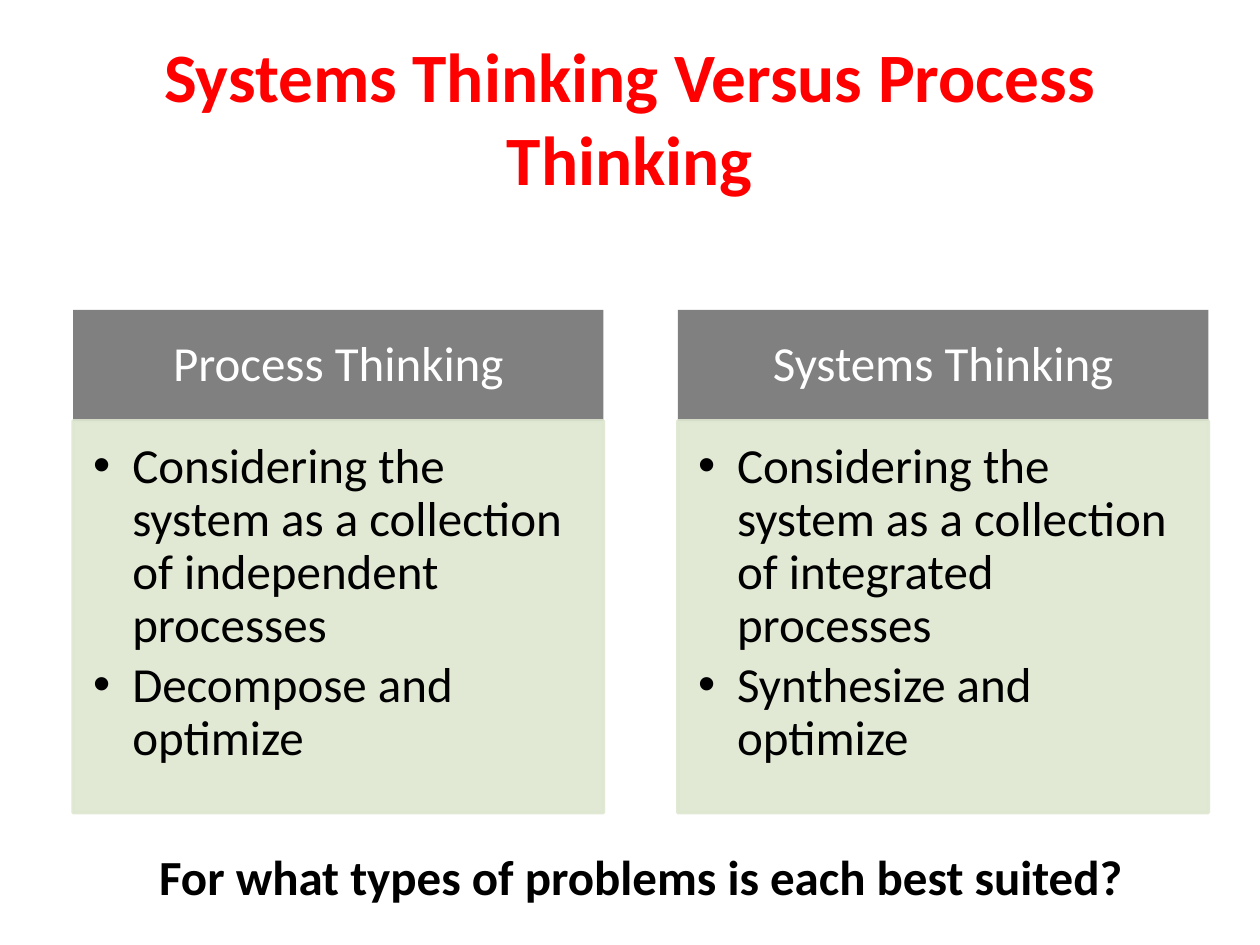
from lxml.etree import SubElement
from pptx import Presentation
from pptx.dml.color import RGBColor
from pptx.enum.shapes import MSO_SHAPE as Shape
from pptx.enum.text import MSO_ANCHOR as Anchor, PP_ALIGN as Align
from pptx.oxml.ns import qn
from pptx.util import Inches, Pt

COLUMN_LEFT, COLUMN_STEP, COLUMN_WIDTH = 0.58, 4.8, 4.21
HEADER_TOP, HEADER_HEIGHT, BODY_HEIGHT = 2.46, 0.88, 3.11
COLUMNS = [
    ("Process Thinking",
     ["Considering the system as a collection of independent processes",
      "Decompose and optimize"]),
    ("Systems Thinking",
     ["Considering the system as a collection of integrated processes",
      "Synthesize and optimize"]),
]


def color(value):
    return RGBColor.from_string(value)


def place(box, left, top, width, height):
    box.left, box.top = Inches(left), Inches(top)
    box.width, box.height = Inches(width), Inches(height)


def add_bullet(para, indent):
    properties = para._p.get_or_add_pPr()
    properties.set("marL", str(Inches(indent)))
    properties.set("indent", str(-Inches(indent)))
    SubElement(properties, qn("a:buFont")).set("typeface", "Arial")
    SubElement(properties, qn("a:buChar")).set("char", "•")


def write(box, lines, size=28, fill="000000", bold=False, align=Align.CENTER,
          anchor=Anchor.TOP, insets=(0.1, 0.05, 0.1, 0.05), spacing=None,
          after=None, bullet=None):
    frame = box.text_frame
    frame.word_wrap = True
    frame.vertical_anchor = anchor
    (frame.margin_left, frame.margin_top,
     frame.margin_right, frame.margin_bottom) = map(Inches, insets)
    for index, line in enumerate(lines):
        para = frame.add_paragraph() if index else frame.paragraphs[0]
        para.alignment = align
        if spacing:
            para.line_spacing = spacing
        if after is not None:
            para.space_after = Pt(after)
        if bullet:
            para.level = 1
            add_bullet(para, bullet)
        span = para.add_run()
        span.text = line
        span.font.name = "Calibri"
        span.font.size = Pt(size)
        span.font.bold = bold
        span.font.color.rgb = color(fill)


def set_opacity(format_fill, percent):
    format_fill.solid()
    return percent * 1000


def add_panel(page, left, top, width, height, fill, opacity=None):
    panel = page.shapes.add_shape(
        Shape.RECTANGLE, *map(Inches, (left, top, width, height)))
    panel.shadow.inherit = False
    panel.fill.solid()
    panel.fill.fore_color.rgb = color(fill)
    if opacity is None:
        panel.line.fill.background()
        return panel
    panel.line.color.rgb = color(fill)
    panel.line.width = Pt(2)
    for shade in panel._element.spPr.iter(qn("a:srgbClr")):
        SubElement(shade, qn("a:alpha")).set("val", str(opacity * 1000))
    return panel


def add_column(page, index, heading, points):
    left = COLUMN_LEFT + index * COLUMN_STEP
    header = add_panel(page, left, HEADER_TOP, COLUMN_WIDTH, HEADER_HEIGHT,
                       "808080")
    write(header, [heading], fill="FFFFFF", anchor=Anchor.MIDDLE,
          insets=(0.22, 0.12, 0.22, 0.12), spacing=0.9)
    body = add_panel(page, left, HEADER_TOP + HEADER_HEIGHT, COLUMN_WIDTH,
                     BODY_HEIGHT, "DEE7D1", opacity=90)
    write(body, points, align=Align.LEFT, insets=(0.16, 0.16, 0.22, 0.24),
          spacing=0.9, after=4.2, bullet=0.31)


def main():
    deck = Presentation()
    deck.slide_width, deck.slide_height = Inches(10), Inches(7.5)
    page = deck.slides.add_slide(deck.slide_layouts[5])
    title = page.shapes.title
    place(title, 0.5, 0.3, 9, 1.25)
    write(title, ["Systems Thinking Versus Process Thinking"], size=39.6,
          fill="FF0000", bold=True, anchor=Anchor.MIDDLE)
    for index, (heading, points) in enumerate(COLUMNS):
        add_column(page, index, heading, points)
    question = page.shapes.add_textbox(
        *map(Inches, (1, 6.67, 8.17, 0.57)))
    write(question, ["For what types of problems is each best suited?"],
          bold=True)
    deck.save("out.pptx")


if __name__ == "__main__":
    main()
